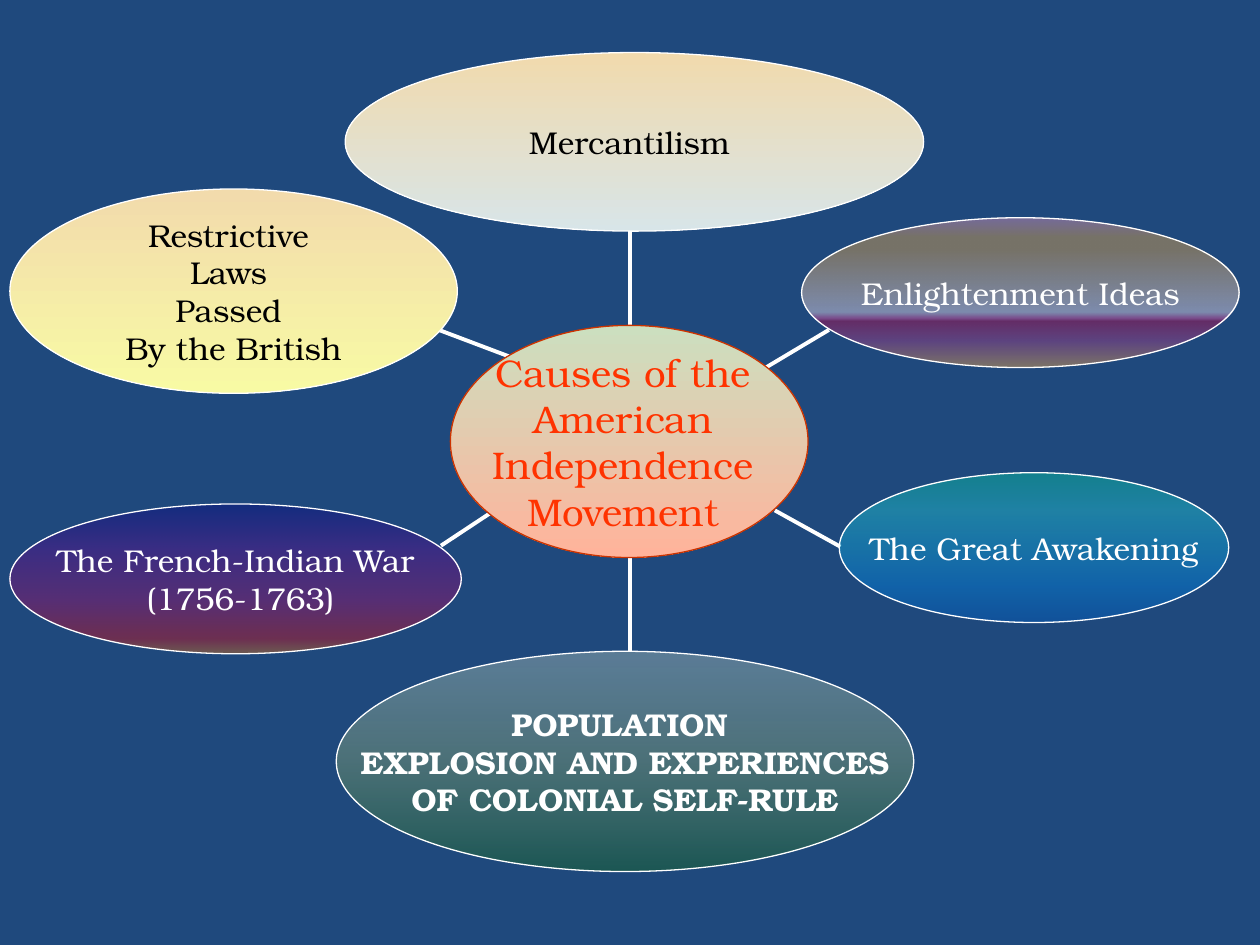
from lxml import etree
from pptx import Presentation
from pptx.dml.color import RGBColor
from pptx.enum.shapes import MSO_CONNECTOR, MSO_SHAPE
from pptx.enum.text import MSO_ANCHOR, PP_ALIGN
from pptx.oxml.ns import qn
from pptx.util import Cm, Pt

FONT = "TeX Gyre Bonum"
NAVY = RGBColor(0x1F, 0x49, 0x7D)
WHITE = RGBColor(0xFF, 0xFF, 0xFF)
BLACK = RGBColor(0x00, 0x00, 0x00)
RUST = RGBColor(0xCC, 0x33, 0x00)
ORANGE_RED = RGBColor(0xFF, 0x33, 0x00)

# Gradients from top to bottom: position %, colour, opacity %
NIGHT = [(0, "000082", 39), (30, "66008F", 38), (65, "BA0066", 36),
         (90, "FF0000", 35), (100, "FF8200", 35)]
GREEN = [(0, "DDEBCF", 31), (50, "9CB86E", 35), (100, "156B13", 39)]
OCEAN = [(0, "03D4A8", 39), (25, "21D6E0", 40), (75, "0087E6", 42),
         (100, "005CBF", 43)]
SUNSET = [(0, "FC9FCB", 39), (13, "F8B049", 40), (21, "F8B049", 40),
          (63, "FEE7F2", 42), (67, "F952A0", 42), (69, "C50849", 42),
          (82, "B43E85", 42), (100, "F8B049", 43)]
YELLOW = [(0, "F2DBAC", 100), (100, "F8FAA4", 100)]
CREAM = [(0, "F1DAAD", 100), (100, "D8E5E8", 100)]
PEACH = [(0, "CCDFBF", 100), (100, "FFB39B", 100)]


def set_gradient(shape, stops):
    shape.fill.gradient()
    shape.fill.gradient_angle = 270
    stop_list = shape._element.spPr.find(qn("a:gradFill")).find(qn("a:gsLst"))
    for old_stop in list(stop_list):
        stop_list.remove(old_stop)
    for position, color, opacity in stops:
        stop = etree.SubElement(stop_list, qn("a:gs"), pos=str(position * 1000))
        color_element = etree.SubElement(stop, qn("a:srgbClr"), val=color)
        if opacity < 100:
            etree.SubElement(color_element, qn("a:alpha"), val=str(opacity * 1000))


presentation = Presentation()
presentation.slide_width = Cm(25.4)
presentation.slide_height = Cm(19.05)
slide = presentation.slides.add_slide(presentation.slide_layouts[6])
slide.background.fill.solid()
slide.background.fill.fore_color.rgb = NAVY

# Spokes between the centre and the causes (x1, y1, x2, y2 in cm)
spokes = [
    (10.16, 10.16, 8.89, 11),
    (12.7, 11.23, 12.7, 13.13),
    (10.62, 7.32, 8.05, 6.35),
    (15.62, 10.29, 16.94, 11.02),
    (15.42, 7.42, 16.71, 6.65),
    (12.7, 6.58, 12.7, 4.01),
]
for spoke in spokes:
    connector = slide.shapes.add_connector(
        MSO_CONNECTOR.STRAIGHT, *[Cm(value) for value in spoke])
    connector.line.color.rgb = WHITE
    connector.line.width = Pt(2.25)
    etree.SubElement(connector._element.spPr, qn("a:effectLst"))

# Ellipses: box in cm, gradient, outline, text colour, size, bold, text
ellipses = [
    ((0.2, 10.16, 9.1, 3.02), NIGHT, WHITE, WHITE, 18, False,
     "The French-Indian War\n (1756-1763)"),
    ((6.78, 13.13, 11.64, 4.44), GREEN, WHITE, WHITE, 18, True,
     "POPULATION \nEXPLOSION AND EXPERIENCES\nOF COLONIAL SELF-RULE"),
    ((16.92, 9.53, 7.85, 3.02), OCEAN, WHITE, WHITE, 18, False,
     "The Great Awakening"),
    ((0.2, 3.81, 9.02, 4.12), YELLOW, WHITE, BLACK, 18, False,
     "Restrictive \nLaws \nPassed \nBy the British"),
    ((16.16, 4.39, 8.82, 3.02), SUNSET, WHITE, WHITE, 18, False,
     "Enlightenment Ideas"),
    ((6.96, 1.06, 11.66, 3.6), CREAM, WHITE, BLACK, 18, False,
     "Mercantilism "),
    ((9.08, 6.56, 7.21, 4.68), PEACH, RUST, ORANGE_RED, 22, False,
     "Causes of the \nAmerican \nIndependence \nMovement "),
]
for box, stops, outline, text_color, size, bold, text in ellipses:
    shape = slide.shapes.add_shape(MSO_SHAPE.OVAL, *[Cm(value) for value in box])
    shape.shadow.inherit = False
    set_gradient(shape, stops)
    shape.line.color.rgb = outline
    shape.line.width = Pt(0.75)
    text_frame = shape.text_frame
    text_frame.word_wrap = False
    text_frame.vertical_anchor = MSO_ANCHOR.MIDDLE
    text_frame.text = text
    for paragraph in text_frame.paragraphs:
        paragraph.alignment = PP_ALIGN.CENTER
        for run in paragraph.runs:
            run.font.name = FONT
            run.font.size = Pt(size)
            run.font.bold = bold
            run.font.color.rgb = text_color

presentation.save("out.pptx")
